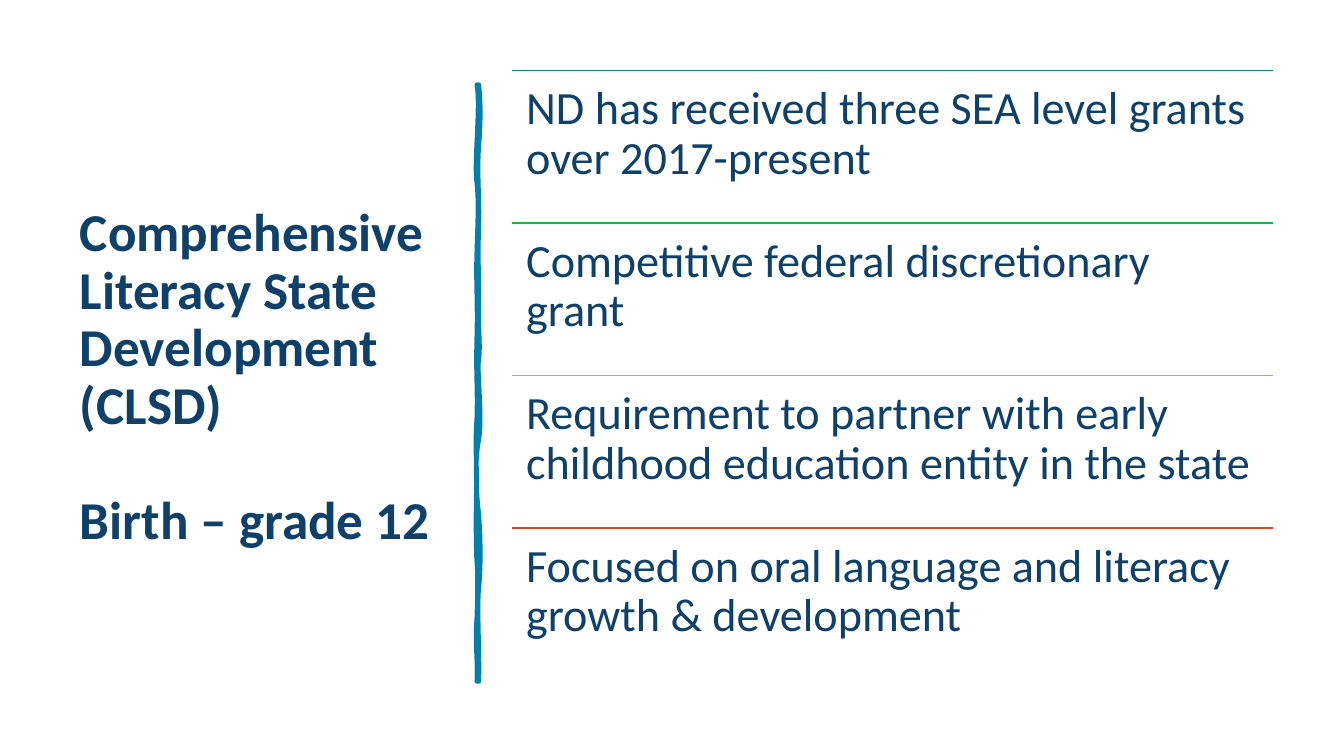
"""Build the slide on the Comprehensive Literacy State Development grants."""
from lxml import etree
from pptx import Presentation
from pptx.dml.color import RGBColor
from pptx.enum.shapes import MSO_CONNECTOR
from pptx.enum.text import MSO_ANCHOR
from pptx.oxml.ns import qn
from pptx.util import Pt

STRAIGHT = MSO_CONNECTOR.STRAIGHT
MIDDLE = MSO_ANCHOR.MIDDLE
COLORS = {"navy": "0E406A", "blue": "037FAE", "green": "0DBD39", "lime": "A2C919", "red": "D34927"}
FONT = "Calibri"
INCH = 72


def color(name):
    return RGBColor.from_string(COLORS[name])


def format_paragraph(paragraph, size, bold=False):
    paragraph.line_spacing = 0.9
    for run in paragraph.runs:
        run.font.name = FONT
        run.font.size = Pt(size)
        run.font.bold = bold
        run.font.color.rgb = color("navy")


presentation = Presentation()
presentation.slide_width = Pt(960)
presentation.slide_height = Pt(540)
slide = presentation.slides.add_slide(presentation.slide_layouts[6])

title = slide.shapes.add_textbox(Pt(50), Pt(50.4), Pt(269.3), Pt(440))
title_frame = title.text_frame
title_frame.word_wrap = True
title_frame.vertical_anchor = MIDDLE
title_frame.text = "Comprehensive Literacy State Development (CLSD)\nBirth – grade 12"
for paragraph in title_frame.paragraphs:
    format_paragraph(paragraph, 38, bold=True)
title_frame.paragraphs[1].space_before = Pt(41.5)

divider_start = (4.75, 0.84)
divider_curves = [
    [(4.77, 1.02), (4.77, 1.19), (4.75, 1.46)],
    [(4.73, 1.73), (4.76, 1.95), (4.75, 2.26)],
    [(4.74, 2.57), (4.75, 2.62), (4.75, 2.94)],
    [(4.74, 3.25), (4.77, 3.42), (4.75, 3.56)],
    [(4.73, 3.7), (4.79, 4.14), (4.75, 4.36)],
    [(4.71, 4.57), (4.72, 4.84), (4.75, 5.1)],
    [(4.77, 5.36), (4.77, 5.64), (4.75, 5.84)],
    [(4.73, 6.03), (4.76, 6.5), (4.75, 6.76)],
    [(4.74, 6.76), (4.73, 6.76), (4.73, 6.76)],
    [(4.74, 6.46), (4.71, 6.44), (4.73, 6.13)],
    [(4.74, 5.83), (4.74, 5.7), (4.73, 5.57)],
    [(4.72, 5.44), (4.72, 4.95), (4.73, 4.77)],
    [(4.73, 4.59), (4.71, 4.45), (4.73, 4.15)],
    [(4.74, 3.86), (4.72, 3.73), (4.73, 3.35)],
    [(4.74, 2.98), (4.72, 2.81), (4.73, 2.5)],
    [(4.74, 2.18), (4.75, 2), (4.73, 1.81)],
    [(4.7, 1.63), (4.77, 1.04), (4.73, 0.84)],
    [(4.74, 0.84), (4.74, 0.84), (4.75, 0.84)],
]
builder = slide.shapes.build_freeform(*(Pt(value * INCH) for value in divider_start))
builder.add_line_segments(
    [(Pt(x * INCH), Pt(y * INCH)) for curve in divider_curves for x, y in curve], close=True
)
divider = builder.convert_to_shape()
segments = list(divider._element.iter(qn("a:lnTo")))
for first in range(0, len(divider_curves) * 3, 3):
    curve_element = etree.Element(qn("a:cubicBezTo"))
    segments[first].addprevious(curve_element)
    for segment in segments[first:first + 3]:
        curve_element.append(segment[0])
        segment.getparent().remove(segment)
divider.shadow.inherit = False
divider.fill.solid()
divider.fill.fore_color.rgb = color("blue")
divider.line.color.rgb = color("blue")
divider.line.width = Pt(3.25)

facts = [
    ("blue", "ND has received three SEA level grants over 2017-present"),
    ("green", "Competitive federal discretionary grant"),
    ("lime", "Requirement to partner with early childhood education entity in the state"),
    ("red", "Focused on oral language and literacy growth & development"),
]
facts_left, facts_top, facts_width, row_height = 365.8, 50.4, 543.6, 108.95
for index, (rule_color, fact) in enumerate(facts):
    top = Pt(facts_top + index * row_height)
    rule = slide.shapes.add_connector(STRAIGHT, Pt(facts_left), top, Pt(facts_left + facts_width), top)
    rule.line.color.rgb = color(rule_color)
    rule.line.width = Pt(1)
    etree.SubElement(rule._element.spPr, qn("a:effectLst"))

    fact_box = slide.shapes.add_textbox(Pt(facts_left), top, Pt(facts_width), Pt(row_height))
    frame = fact_box.text_frame
    frame.word_wrap = True
    frame.margin_left = frame.margin_top = frame.margin_bottom = Pt(10)
    frame.margin_right = Pt(13)
    frame.text = fact
    format_paragraph(frame.paragraphs[0], 33)

presentation.save("out.pptx")
